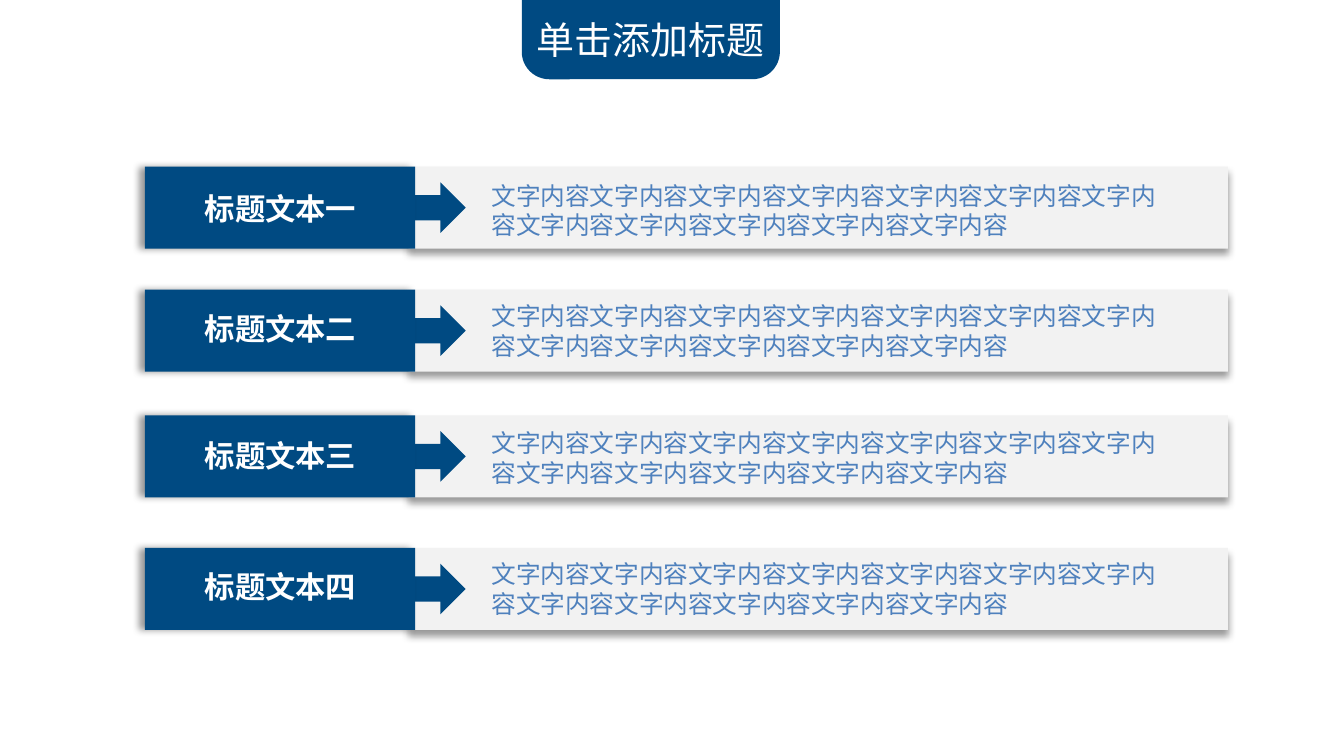
from dataclasses import dataclass

from lxml.etree import SubElement
from pptx import Presentation
from pptx.dml.color import RGBColor
from pptx.enum.shapes import MSO_SHAPE as Preset
from pptx.enum.text import MSO_AUTO_SIZE as AutoSize, PP_ALIGN as Align
from pptx.oxml.ns import qn
from pptx.shapes.autoshape import Shape
from pptx.slide import Slide
from pptx.util import Inches, Pt

# Grid of tenth-of-an-inch cells
CELL = Inches(0.1)
COLUMNS, ROWS = 98.4, 55.1

FONT = "Noto Sans CJK SC"
NAVY = RGBColor(0x00, 0x4A, 0x82)
PALE_GRAY = RGBColor(0xF2, 0xF2, 0xF2)
BODY_BLUE = RGBColor(0x4F, 0x81, 0xBD)
WHITE = RGBColor(0xFF, 0xFF, 0xFF)
BLACK = RGBColor(0x00, 0x00, 0x00)

SHADOW_DOWN, SHADOW_LEFT = 90, 180
BAND_HEIGHT, ARROW_HEIGHT = 6, 3.7
BODY_TEXT = "文字内容" * 12


@dataclass(frozen=True)
class Box:
    column: float
    row: float
    width: float
    height: float

    def lengths(self) -> list[int]:
        cells = (self.column, self.row, self.width, self.height)
        return [round(cell * CELL) for cell in cells]


@dataclass(frozen=True)
class Band:
    label: str
    row: float
    label_row: float


BANDS = (
    Band("标题文本一", 12.2, 13.5),
    Band("标题文本二", 21.2, 22.3),
    Band("标题文本三", 30.4, 31.6),
    Band("标题文本四", 40.1, 41.2),
)


def add_shadow(shape: Shape, direction: int) -> None:
    effects = shape._element.spPr.find(qn("a:effectLst"))
    shadow = SubElement(effects, qn("a:outerShdw"), blurRad=str(Pt(4)),
                        dist=str(Pt(3)), dir=str(direction * 60000),
                        algn="ctr", rotWithShape="0")
    color = SubElement(shadow, qn("a:srgbClr"), val=str(BLACK))
    SubElement(color, qn("a:alpha"), val="40000")


def add_block(slide: Slide, preset: Preset, box: Box, fill: RGBColor,
              shadow_direction: int | None = None) -> Shape:
    shape = slide.shapes.add_shape(preset, *box.lengths())
    shape.fill.solid()
    shape.fill.fore_color.rgb = fill
    shape.line.fill.background()
    shape.shadow.inherit = False
    if shadow_direction is not None:
        add_shadow(shape, shadow_direction)
    return shape


def add_text(slide: Slide, text: str, box: Box, *, size: float,
             color: RGBColor, bold: bool = False,
             align: Align = Align.LEFT) -> None:
    frame = slide.shapes.add_textbox(*box.lengths()).text_frame
    frame.word_wrap = True
    frame.auto_size = AutoSize.SHAPE_TO_FIT_TEXT
    frame.margin_left = frame.margin_right = Inches(0.07)
    frame.margin_top = frame.margin_bottom = Inches(0.04)
    paragraph = frame.paragraphs[0]
    paragraph.alignment = align
    run = paragraph.add_run()
    run.text = text
    run.font.name = FONT
    run.font.size = Pt(size)
    run.font.bold = bold
    run.font.color.rgb = color
    SubElement(run.font._element, qn("a:ea"), typeface=FONT)


def add_band(slide: Slide, band: Band) -> None:
    arrow_row = band.row + (BAND_HEIGHT - ARROW_HEIGHT) / 2
    add_block(slide, Preset.RECTANGLE, Box(29.9, band.row, 60, BAND_HEIGHT),
              PALE_GRAY, SHADOW_DOWN)
    add_block(slide, Preset.RIGHT_ARROW,
              Box(29.4, arrow_row, 4.7, ARROW_HEIGHT), NAVY)
    add_block(slide, Preset.RECTANGLE, Box(10.6, band.row, 19.8, BAND_HEIGHT),
              NAVY, SHADOW_LEFT)
    add_text(slide, band.label, Box(13.8, band.label_row, 13.5, 3.5),
             size=16, color=WHITE, bold=True, align=Align.CENTER)
    add_text(slide, BODY_TEXT, Box(35.3, band.label_row - 0.7, 51.7, 5.2),
             size=13, color=BODY_BLUE)


def main() -> None:
    presentation = Presentation()
    presentation.slide_width = round(COLUMNS * CELL)
    presentation.slide_height = round(ROWS * CELL)
    slide = presentation.slides.add_slide(presentation.slide_layouts[6])

    # Labelled bands
    for band in BANDS:
        add_band(slide, band)

    # Title tab hanging from the top edge
    add_block(slide, Preset.ROUNDED_RECTANGLE, Box(38.2, -6.3, 18.9, 12.1), NAVY)
    add_text(slide, "单击添加标题", Box(38.6, 0.8, 19.3, 4.1),
             size=20, color=WHITE)

    presentation.save("out.pptx")


if __name__ == "__main__":
    main()
